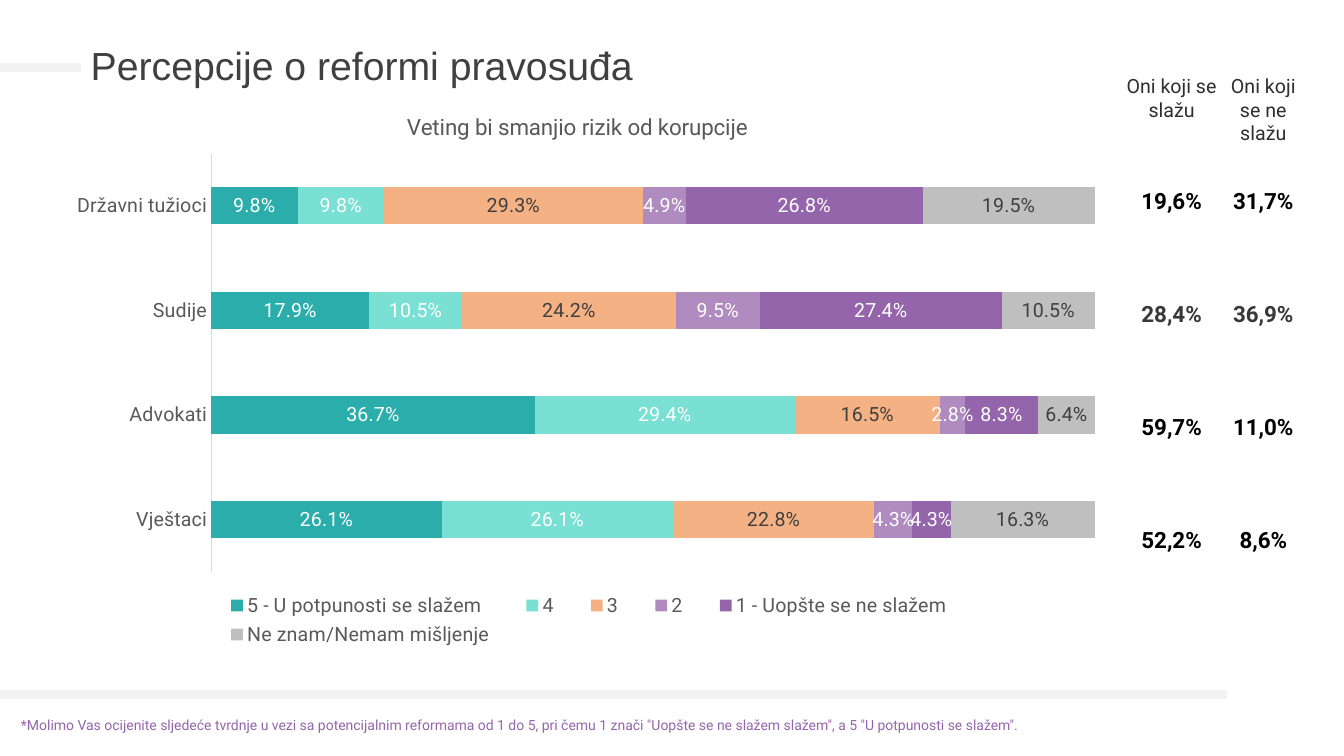
from dataclasses import dataclass
from typing import NamedTuple

from pptx import Presentation
from pptx.chart.chart import Chart
from pptx.chart.data import CategoryChartData
from pptx.dml.color import RGBColor
from pptx.enum.chart import XL_CHART_TYPE as Kind
from pptx.enum.chart import XL_LABEL_POSITION as Spot
from pptx.enum.chart import XL_LEGEND_POSITION as Side
from pptx.enum.chart import XL_TICK_MARK as Tick
from pptx.enum.shapes import MSO_CONNECTOR as Link
from pptx.enum.text import MSO_ANCHOR as Anchor
from pptx.enum.text import MSO_AUTO_SIZE as Fit
from pptx.enum.text import PP_ALIGN as Align
from pptx.oxml import parse_xml
from pptx.oxml.ns import nsdecls, qn
from pptx.slide import Slide
from pptx.table import _Cell as Cell
from pptx.text.text import Font
from pptx.util import Inches, Pt


@dataclass(frozen=True)
class Theme:
    head: str = "Arial"
    body: str = "Roboto"
    dark: str = "404040"
    grey: str = "595959"
    ink: str = "312C30"
    black: str = "000000"
    soft: str = "3A3838"
    white: str = "FFFFFF"
    rule: str = "F2F2F2"
    axis: str = "D9D9D9"
    plum: str = "9565AB"
    title: int = 28
    sub: int = 16
    text: int = 14
    note: int = 10


class Answer(NamedTuple):
    name: str
    color: str
    label: str
    vals: tuple[float, ...]


class Group(NamedTuple):
    name: str
    agree: str
    differ: str
    color: str


class Rule(NamedTuple):
    y: float
    end: float


class Box(NamedTuple):
    """Place of a chart part, as shares of the chart."""
    x: float
    y: float
    w: float | None = None
    h: float | None = None


T = Theme()
ANSWERS = [
    Answer("5 - U potpunosti se slažem", "2BAEAB", T.white, (0.098, 0.179, 0.367, 0.261)),
    Answer("4", "7AE0D4", T.white, (0.098, 0.105, 0.294, 0.261)),
    Answer("3", "F4B183", T.dark, (0.293, 0.242, 0.165, 0.228)),
    Answer("2", "AF8BBF", T.white, (0.049, 0.095, 0.028, 0.043)),
    Answer("1 - Uopšte se ne slažem", T.plum, T.white, (0.268, 0.274, 0.083, 0.043)),
    Answer("Ne znam/Nemam mišljenje", "BFBFBF", T.dark, (0.195, 0.105, 0.064, 0.163)),
]
GROUPS = [
    Group("Državni tužioci", "19,6%", "31,7%", T.black),
    Group("Sudije", "28,4%", "36,9%", T.soft),
    Group("Advokati", "59,7%", "11,0%", T.black),
    Group("Vještaci", "52,2%", "8,6%", T.black),
]
HEADS = ("Oni koji se slažu", "Oni koji se ne slažu")
RULES = [Rule(0.67, 0.8), Rule(6.89, 12.17)]
TITLE = "Percepcije o reformi pravosuđa"
SUB = "Veting bi smanjio rizik od korupcije"
NOTE = ('*Molimo Vas ocijenite sljedeće tvrdnje u vezi sa potencijalnim reformama od 1 do 5, '
        'pri čemu 1 znači "Uopšte se ne slažem slažem", a 5 "U potpunosti se slažem".')


def style(font: Font, size: int, color: str, face: str = T.body, bold: bool = False) -> None:
    font.name, font.size, font.bold = face, Pt(size), bold
    font.color.rgb = RGBColor.from_string(color)


def add_rule(slide: Slide, rule: Rule) -> None:
    y = Inches(rule.y)
    line = slide.shapes.add_connector(Link.STRAIGHT, 0, y, Inches(rule.end), y)
    line.line.color.rgb = RGBColor.from_string(T.rule)
    line.line.width = Pt(6)
    line._element.spPr.append(parse_xml(f"<a:effectLst {nsdecls('a')}/>"))


def add_title(slide: Slide) -> None:
    title = slide.shapes.title
    title.left, title.top = Inches(0.8), Inches(0.23)
    title.width, title.height = Inches(12.16), Inches(0.88)
    frame = title.text_frame
    frame.text = TITLE
    frame.auto_size = Fit.NONE
    frame.vertical_anchor = Anchor.MIDDLE
    para = frame.paragraphs[0]
    para.alignment, para.line_spacing = Align.LEFT, 0.9
    style(para.runs[0].font, T.title, T.dark, T.head)


def add_note(slide: Slide) -> None:
    box = slide.shapes.add_textbox(Inches(0.11), Inches(7.06), Inches(10.65), Inches(0.27))
    box.text_frame.word_wrap = True
    box.text_frame.text = NOTE
    style(box.text_frame.paragraphs[0].runs[0].font, T.note, T.plum)


def fill_cell(cell: Cell, text: str, size: int, color: str, head: bool) -> None:
    cell.fill.background()
    cell.margin_left = cell.margin_right = Inches(0.01)
    cell.margin_top = Inches(0.4 if head else 0.01)
    cell.margin_bottom = 0
    cell.vertical_anchor = Anchor.TOP if head else Anchor.MIDDLE
    cell.text_frame.text = text
    para = cell.text_frame.paragraphs[0]
    para.alignment = Align.CENTER
    style(para.runs[0].font, size, color, bold=not head)


def add_sums(slide: Slide) -> None:
    """Add the table of those who agree and those who do not."""
    table = slide.shapes.add_table(len(GROUPS) + 1, 2, Inches(11.14), Inches(0.35),
                                   Inches(1.82), Inches(5.57)).table
    table.first_row = table.horz_banding = False
    for col, width in zip(table.columns, (0.96, 0.86)):
        col.width = Inches(width)
    for i, row in enumerate(table.rows):
        row.height = Inches(1.12 if i else 1.09)
    for cell, text in zip(table.rows[0].cells, HEADS):
        fill_cell(cell, text, T.text, T.ink, True)
    for row, group in zip(list(table.rows)[1:], GROUPS):
        for cell, text in zip(row.cells, (group.agree, group.differ)):
            fill_cell(cell, text, T.sub, group.color, False)


def place(chart: Chart, part: str, after: str | None, box: Box) -> None:
    """Fix a chart part in place, with its layout put after the named child."""
    node = next(chart._chartSpace.iter(qn(part)))
    for old in node.findall(qn("c:layout")):
        node.remove(old)
    inner = '<c:layoutTarget val="inner"/>' if part == "c:plotArea" else ""
    sizes = {k: v for k, v in box._asdict().items() if v is not None}
    modes = "".join(f'<c:{k}Mode val="edge"/>' for k in "xy")
    vals = "".join(f'<c:{k} val="{v}"/>' for k, v in sizes.items())
    layout = parse_xml(f"<c:layout {nsdecls('c')}><c:manualLayout>{inner}{modes}{vals}"
                       "</c:manualLayout></c:layout>")
    node.insert(node.index(node.find(qn(after))) + 1 if after else 0, layout)


def add_bars(slide: Slide) -> None:
    data = CategoryChartData(number_format="0.0%")
    data.categories = [group.name for group in GROUPS]
    for answer in ANSWERS:
        data.add_series(answer.name, answer.vals)
    chart = slide.shapes.add_chart(Kind.BAR_STACKED_100, Inches(0.51), Inches(0.85),
                                   Inches(10.56), Inches(5.61), data).chart
    style(chart.font, T.text, T.black)
    frame = chart.chart_title.text_frame
    frame.text = SUB
    style(frame.paragraphs[0].runs[0].font, T.sub, T.grey)
    chart.chart_title.include_in_layout = False

    cats, vals = chart.category_axis, chart.value_axis
    cats.reverse_order = True
    cats.major_tick_mark = cats.minor_tick_mark = Tick.NONE
    cats.format.line.color.rgb = RGBColor.from_string(T.axis)
    cats.format.line.width = Pt(0.75)
    style(cats.tick_labels.font, T.text, T.grey)
    vals.visible = vals.has_major_gridlines = False

    chart.has_legend = True
    chart.legend.position = Side.BOTTOM
    chart.legend.include_in_layout = False
    style(chart.legend.font, T.text, T.grey)

    plot = chart.plots[0]
    plot.gap_width, plot.overlap, plot.vary_by_categories = 182, 100, False
    for bar, answer in zip(plot.series, ANSWERS):
        bar.format.fill.solid()
        bar.format.fill.fore_color.rgb = RGBColor.from_string(answer.color)
        labels = bar.data_labels
        labels.show_value, labels.position = True, Spot.CENTER
        labels.number_format, labels.number_format_is_linked = "0.0%", False
        style(labels.font, T.text, answer.label)

    place(chart, "c:title", "c:tx", Box(0.33, 0.04))
    place(chart, "c:plotArea", None, Box(0.15, 0.12, 0.83, 0.74))
    place(chart, "c:legend", "c:legendPos", Box(0.14, 0.89, 0.73, 0.11))


def main() -> None:
    deck = Presentation()
    deck.slide_width, deck.slide_height = Inches(13.33), Inches(7.5)
    slide = deck.slides.add_slide(deck.slide_layouts[5])
    add_title(slide)
    for rule in RULES:
        add_rule(slide, rule)
    add_sums(slide)
    add_note(slide)
    add_bars(slide)
    deck.save("out.pptx")


if __name__ == "__main__":
    main()
